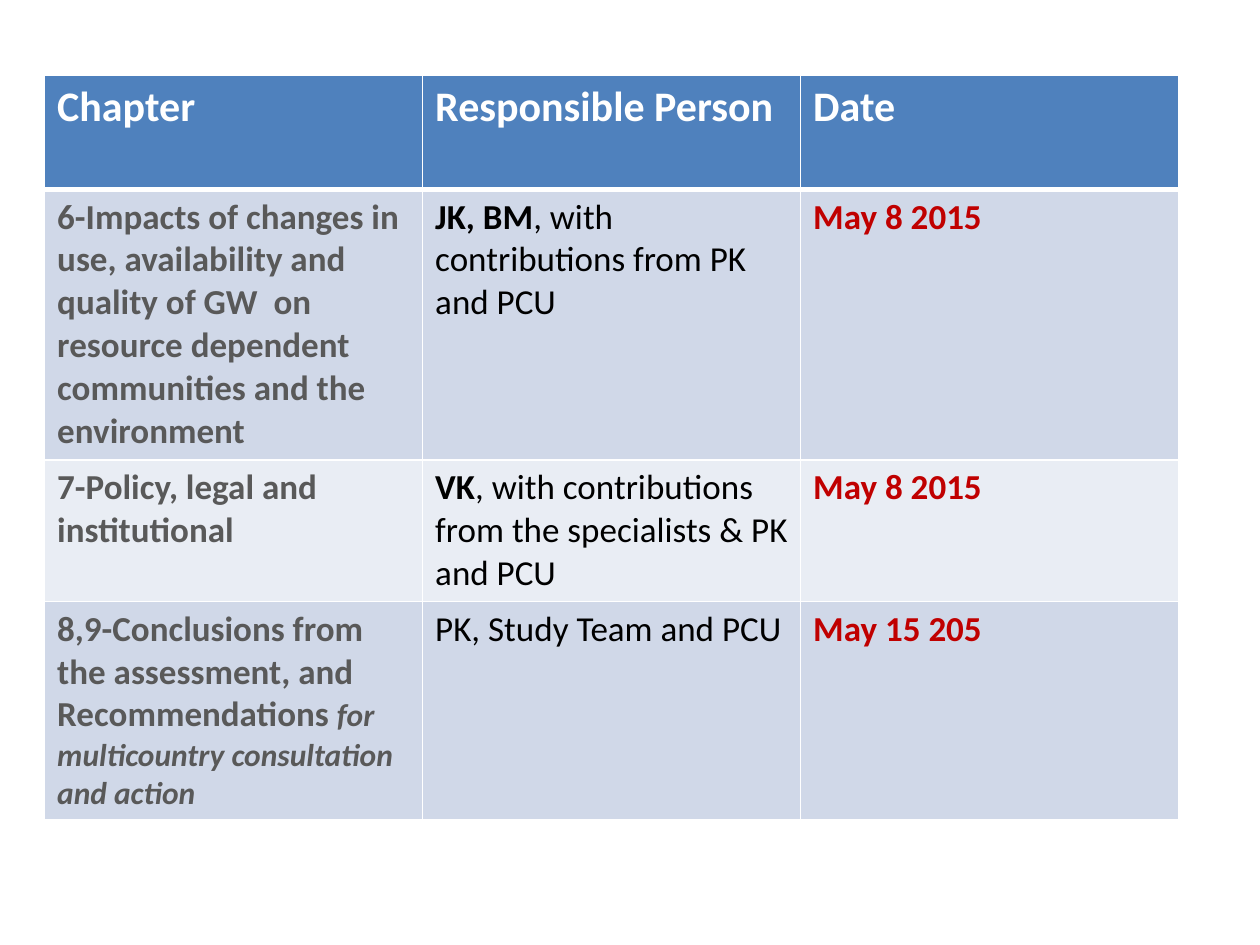
from dataclasses import dataclass

from lxml import etree
from pptx import Presentation
from pptx.dml.color import RGBColor
from pptx.oxml import ns
from pptx.util import Pt


@dataclass(frozen=True)
class Theme:
    font: str = "Calibri"
    header_size: int = 24
    body_size: int = 20
    note_size: int = 18
    white: str = "FFFFFF"
    black: str = "000000"
    grey: str = "595959"
    red: str = "C00000"
    header_fill: str = "4F81BD"
    band_fills: tuple = ("D0D8E8", "E9EDF4")
    thin_line: int = 1
    thick_line: int = 3


THEME = Theme()

HEADERS = ["Chapter", "Responsible Person", "Date"]
HEADER_HEIGHT = 65

# Each row: height, chapter, chapter note, lead persons, contributors, date
CHAPTERS = [
    (154.6, "6-Impacts of changes in use, availability and quality of GW  on "
     "resource dependent communities and the environment", "",
     "JK, BM", ", with contributions from PK and PCU", "May 8 2015"),
    (81, "7-Policy, legal and institutional", "",
     "VK", ", with contributions from the specialists & PK and PCU", "May 8 2015"),
    (124, "8,9-Conclusions from the assessment, and Recommendations ",
     "for multicountry consultation and action",
     "", "PK, Study Team and PCU", "May 15 205"),
]


def set_borders(cell, bottom_width):
    """Draw white lines on all four sides of a cell."""
    properties = cell._tc.get_or_add_tcPr()
    widths = {"a:lnL": THEME.thin_line, "a:lnR": THEME.thin_line,
              "a:lnT": THEME.thin_line, "a:lnB": bottom_width}
    for tag, width in widths.items():
        line = etree.SubElement(properties, ns.qn(tag), w=str(Pt(width)))
        fill = etree.SubElement(line, ns.qn("a:solidFill"))
        etree.SubElement(fill, ns.qn("a:srgbClr"), val=THEME.white)


def fill_cell(cell, runs, fill, bottom_width=THEME.thin_line):
    """Style a cell; each run is (text, size, colour, bold, italic)."""
    set_borders(cell, bottom_width)
    cell.fill.solid()
    cell.fill.fore_color.rgb = RGBColor.from_string(fill)
    paragraph = cell.text_frame.paragraphs[0]
    for content, size, colour, bold, italic in runs:
        if not content:
            continue
        run = paragraph.add_run()
        run.text = content
        run.font.name = THEME.font
        run.font.size = Pt(size)
        run.font.bold = bold
        run.font.italic = italic
        run.font.color.rgb = RGBColor.from_string(colour)


def add_schedule(slide, left, top, width):
    """Place the table of chapters, persons and dates."""
    heights = [HEADER_HEIGHT] + [chapter[0] for chapter in CHAPTERS]
    table = slide.shapes.add_table(
        len(heights), len(HEADERS),
        Pt(left), Pt(top), Pt(width), Pt(sum(heights))).table
    for row, height in zip(table.rows, heights):
        row.height = Pt(height)
    for column in table.columns:
        column.width = Pt(width / len(HEADERS))

    # Header row
    for cell, header in zip(table.rows[0].cells, HEADERS):
        fill_cell(cell, [(header, THEME.header_size, THEME.white, True, False)],
                  THEME.header_fill, THEME.thick_line)

    # Chapter rows with alternating fills
    size = THEME.body_size
    for index, (_, chapter, note, leads, contributors, date) in enumerate(CHAPTERS):
        contents = [
            [(chapter, size, THEME.grey, True, False),
             (note, THEME.note_size, THEME.grey, True, True)],
            [(leads, size, THEME.black, True, False),
             (contributors, size, THEME.black, False, False)],
            [(date, size, THEME.red, True, False)],
        ]
        fill = THEME.band_fills[index % len(THEME.band_fills)]
        for cell, runs in zip(table.rows[index + 1].cells, contents):
            fill_cell(cell, runs, fill)


def main():
    presentation = Presentation()
    presentation.slide_width = Pt(720)
    presentation.slide_height = Pt(540)
    slide = presentation.slides.add_slide(presentation.slide_layouts[6])
    add_schedule(slide, left=25.5, top=43.2, width=648)
    presentation.save("out.pptx")


if __name__ == "__main__":
    main()
